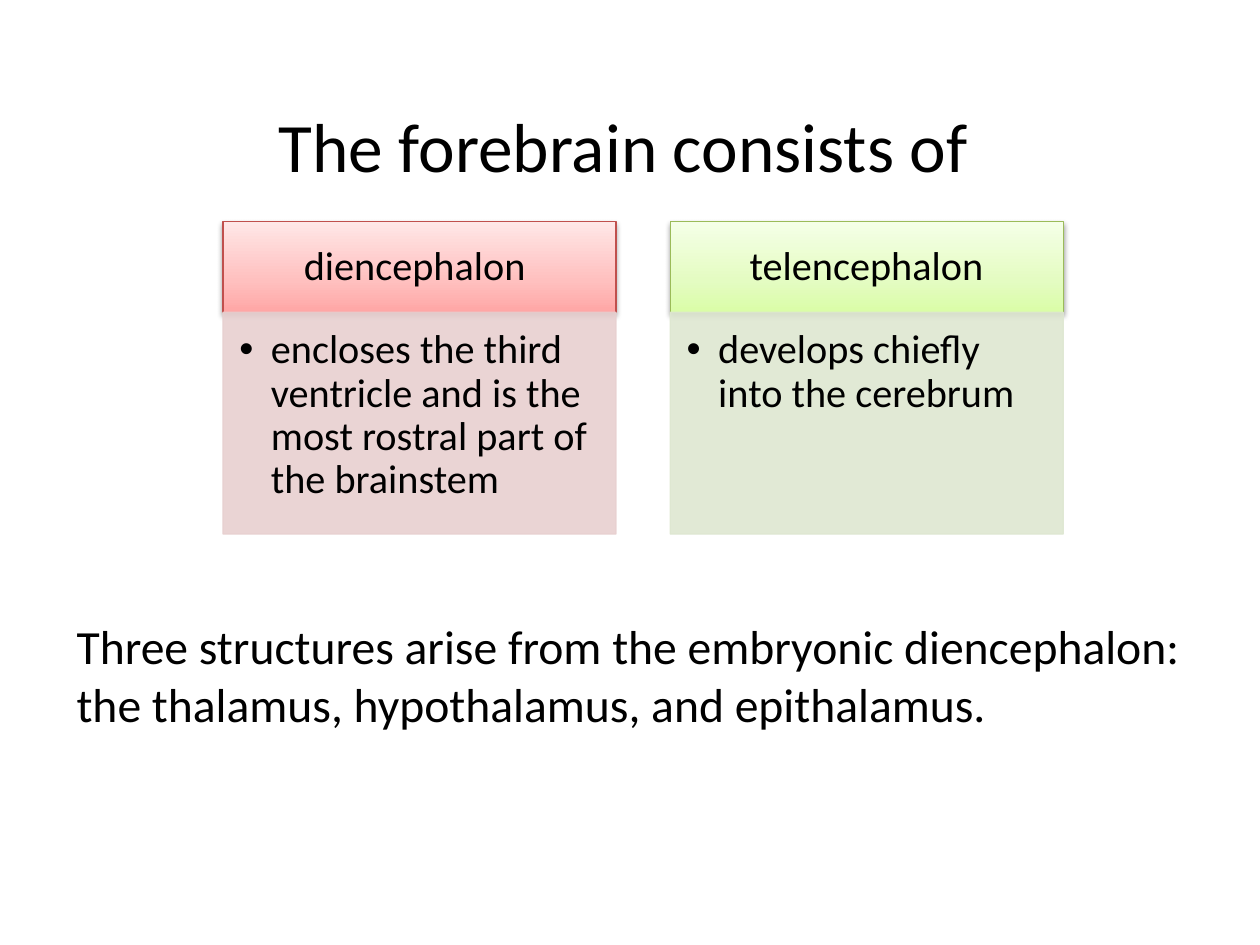
"""Build the slide on the two parts of the forebrain."""
from pptx import Presentation
from pptx.dml.color import RGBColor
from pptx.enum.shapes import MSO_SHAPE
from pptx.enum.text import MSO_ANCHOR, MSO_AUTO_SIZE, PP_ALIGN
from pptx.oxml import parse_xml
from pptx.oxml.ns import nsdecls, qn
from pptx.util import Pt

RECTANGLE = MSO_SHAPE.RECTANGLE
TOP, MIDDLE = MSO_ANCHOR.TOP, MSO_ANCHOR.MIDDLE
LEFT, CENTER = PP_ALIGN.LEFT, PP_ALIGN.CENTER
NO_AUTOFIT = MSO_AUTO_SIZE.NONE

TITLE = "The forebrain consists of "
SUMMARY = ("Three structures arise from the embryonic diencephalon: "
           "the thalamus, hypothalamus, and epithalamus.")
PARTS = [
    ("diencephalon ", "encloses the third ventricle and is the most rostral part of the brainstem", "red"),
    ("telencephalon", "develops chiefly into the cerebrum", "green"),
]
COLORS = {
    "text": "000000",
    "red": {"stops": ("FFA6A5", "FFC0BF", "FFE7E7"), "line": "C0504D", "body": "E8D0D0"},
    "green": {"stops": ("DAFDA7", "E4FCC2", "F5FFE7"), "line": "9BBB59", "body": "DEE7D1"},
}
STOP_POSITIONS = (0, 35, 100)

SLIDE_WIDTH, SLIDE_HEIGHT = 720, 540
MARGIN, CONTENT_WIDTH = 36.7, 648
COLUMN_LEFT, COLUMN_TOP, COLUMN_WIDTH, COLUMN_GAP = 127.4, 126.7, 224.6, 31
HEADER_HEIGHT, BODY_HEIGHT = 51.8, 126.7
BULLET_INDENT = 18

TITLE_FORMAT = {"size": 39.6, "align": CENTER, "anchor": MIDDLE,
                "insets": (7.2, 3.6, 7.2, 3.6), "paragraph": {}}
SUMMARY_FORMAT = {"size": 27.2, "align": LEFT, "anchor": TOP,
                  "insets": (7.2, 3.6, 7.2, 3.6), "paragraph": {"space_before": Pt(5.4)}}
HEADER_FORMAT = {"size": 23, "align": CENTER, "anchor": MIDDLE,
                 "insets": (13, 7.2, 13, 7.2), "paragraph": {"line_spacing": 0.9}}
BODY_FORMAT = {"size": 23, "align": LEFT, "anchor": TOP,
               "insets": (9.4, 9.4, 13, 14.4), "paragraph": {"line_spacing": 0.9}}


def set_attributes(target, values):
    for name, value in values.items():
        setattr(target, name, value)


def write(holder, text, style):
    frame = holder.text_frame
    sides = ("margin_left", "margin_top", "margin_right", "margin_bottom")
    set_attributes(frame, {"text": text, "word_wrap": True, "auto_size": NO_AUTOFIT,
                           "vertical_anchor": style["anchor"]})
    set_attributes(frame, {side: Pt(inset) for side, inset in zip(sides, style["insets"])})
    paragraph = frame.paragraphs[0]
    set_attributes(paragraph, {"alignment": style["align"], **style["paragraph"]})
    font = paragraph.runs[0].font
    set_attributes(font, {"size": Pt(style["size"]), "name": "Calibri"})
    font.color.rgb = RGBColor.from_string(COLORS["text"])
    return paragraph


def add_box(slide, left, top, height, line_color):
    box = slide.shapes.add_shape(RECTANGLE, Pt(left), Pt(top), Pt(COLUMN_WIDTH), Pt(height))
    box.shadow.inherit = False
    box.line.color.rgb = RGBColor.from_string(line_color)
    box.line.width = Pt(0.75)
    return box


def add_header(slide, left, label, palette):
    header = add_box(slide, left, COLUMN_TOP, HEADER_HEIGHT, palette["line"])
    properties = header._element.spPr
    stops = "".join(f'<a:gs pos="{position * 1000}"><a:srgbClr val="{color}"/></a:gs>'
                    for position, color in zip(STOP_POSITIONS, palette["stops"]))
    properties.find(qn("a:prstGeom")).addnext(parse_xml(
        f'<a:gradFill {nsdecls("a")} rotWithShape="1"><a:gsLst>{stops}</a:gsLst>'
        '<a:lin ang="16200000" scaled="0"/></a:gradFill>'))
    properties.find(qn("a:effectLst")).append(parse_xml(
        f'<a:outerShdw {nsdecls("a")} blurRad="{Pt(3.1)}" dist="{Pt(1.6)}" dir="5400000" rotWithShape="0">'
        '<a:srgbClr val="000000"><a:alpha val="38000"/></a:srgbClr></a:outerShdw>'))
    write(header, label, HEADER_FORMAT)


def add_body(slide, left, text, palette):
    body = add_box(slide, left, COLUMN_TOP + HEADER_HEIGHT, BODY_HEIGHT, palette["body"])
    body.fill.solid()
    body.fill.fore_color.rgb = RGBColor.from_string(palette["body"])
    for color in body._element.spPr.iter(qn("a:srgbClr")):
        color.append(parse_xml(f'<a:alpha {nsdecls("a")} val="90000"/>'))
    bullet = write(body, text, BODY_FORMAT)._p.get_or_add_pPr()
    bullet.set("marL", str(Pt(BULLET_INDENT)))
    bullet.set("indent", str(-Pt(BULLET_INDENT)))
    bullet.append(parse_xml(f'<a:buFont {nsdecls("a")} typeface="Arial"/>'))
    bullet.append(parse_xml(f'<a:buChar {nsdecls("a")} char="•"/>'))


def main():
    deck = Presentation()
    set_attributes(deck, {"slide_width": Pt(SLIDE_WIDTH), "slide_height": Pt(SLIDE_HEIGHT)})
    slide = deck.slides.add_slide(deck.slide_layouts[5])

    title = slide.shapes.title
    set_attributes(title, {"left": Pt(MARGIN), "top": Pt(60.5),
                           "width": Pt(CONTENT_WIDTH), "height": Pt(44)})
    write(title, TITLE, TITLE_FORMAT)

    summary = slide.shapes.add_textbox(Pt(MARGIN), Pt(349.2), Pt(CONTENT_WIDTH), Pt(93.6))
    write(summary, SUMMARY, SUMMARY_FORMAT)

    for column, (label, description, hue) in enumerate(PARTS):
        left = COLUMN_LEFT + column * (COLUMN_WIDTH + COLUMN_GAP)
        add_header(slide, left, label, COLORS[hue])
        add_body(slide, left, description, COLORS[hue])

    deck.save("out.pptx")


if __name__ == "__main__":
    main()
